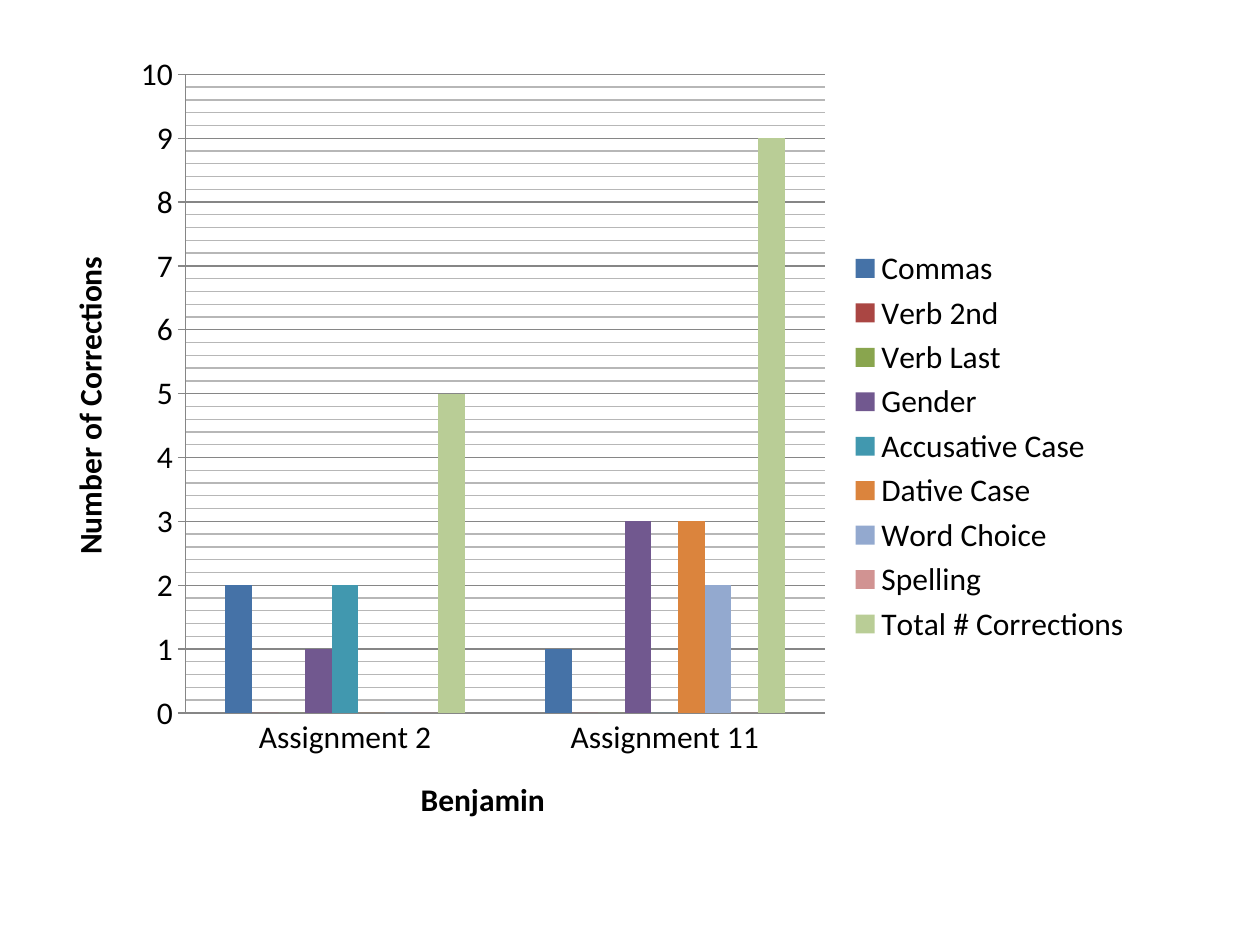
import pptx
import pptx.chart.data
import pptx.dml.color
import pptx.enum.chart
import pptx.oxml
import pptx.oxml.ns
import pptx.util

Pt = pptx.util.Pt
CATEGORIES = ["Assignment 2", "Assignment 11"]
SERIES = [
    ("Commas", (2, 1)),
    ("Verb 2nd", (0, 0)),
    ("Verb Last", (0, 0)),
    ("Gender", (1, 3)),
    ("Accusative Case", (2, 0)),
    ("Dative Case", (0, 3)),
    ("Word Choice", (0, 2)),
    ("Spelling", (0, 0)),
    ("Total # Corrections", (5, 9)),
]
COLORS = {
    "Commas": "4572A7",
    "Verb 2nd": "AA4643",
    "Verb Last": "89A54E",
    "Gender": "71588F",
    "Accusative Case": "4198AF",
    "Dative Case": "DB843D",
    "Word Choice": "93A9CF",
    "Spelling": "D19392",
    "Total # Corrections": "B9CD96",
    "text": "000000",
    "axis": "868686",
    "minor grid": "B7B7B7",
}
PLOT_LAYOUT = {"x": 0.13, "y": 0.04, "w": 0.58, "h": 0.79}  # shares of the chart
LINE_WIDTH = Pt(0.75)


def color(name):
    return pptx.dml.color.RGBColor.from_string(COLORS[name])


def style_font(font, bold=False):
    font.name, font.size, font.bold = "Calibri", Pt(18), bold
    font.color.rgb = color("text")


def style_line(line):
    line.color.rgb = color("axis")
    line.width = LINE_WIDTH


def style_axis(axis, title, tick_mark):
    axis.axis_title.text_frame.text = title
    style_font(axis.axis_title.text_frame.paragraphs[0].runs[0].font, bold=True)
    axis.major_tick_mark = tick_mark
    axis.minor_tick_mark = pptx.enum.chart.XL_TICK_MARK.NONE
    style_line(axis.format.line)


def style_minor_gridlines(axis):
    gridlines = axis._element.find(pptx.oxml.ns.qn("c:minorGridlines"))
    gridlines.append(pptx.oxml.parse_xml(
        f'<c:spPr {pptx.oxml.ns.nsdecls("c", "a")}><a:ln w="{int(LINE_WIDTH)}">'
        f'<a:solidFill><a:srgbClr val="{COLORS["minor grid"]}"/></a:solidFill>'
        f'</a:ln></c:spPr>'))


def place_plot(chart):
    """Fix the inner plot area, without axis labels, at PLOT_LAYOUT."""
    plot_area = chart.plots[0]._element.getparent()
    for old in plot_area.findall(pptx.oxml.ns.qn("c:layout")):
        plot_area.remove(old)
    modes = "".join(f'<c:{key}Mode val="edge"/>' for key in "xy")
    sizes = "".join(f'<c:{key} val="{share}"/>' for key, share in PLOT_LAYOUT.items())
    plot_area.insert(0, pptx.oxml.parse_xml(
        f'<c:layout {pptx.oxml.ns.nsdecls("c")}><c:manualLayout>'
        f'<c:layoutTarget val="inner"/>{modes}{sizes}</c:manualLayout></c:layout>'))


def add_corrections_chart(page):
    data = pptx.chart.data.CategoryChartData()
    data.categories = CATEGORIES
    for name, values in SERIES:
        data.add_series(name, values)
    chart = page.shapes.add_chart(
        pptx.enum.chart.XL_CHART_TYPE.COLUMN_CLUSTERED,
        Pt(24), Pt(24), Pt(630), Pt(462), data).chart
    chart.has_title = False
    style_font(chart.font)

    chart.has_legend = True
    chart.legend.position = pptx.enum.chart.XL_LEGEND_POSITION.RIGHT
    chart.legend.include_in_layout = False

    ticks = pptx.enum.chart.XL_TICK_MARK
    style_axis(chart.category_axis, "Benjamin", ticks.NONE)
    axis = chart.value_axis
    style_axis(axis, "Number of Corrections", ticks.OUTSIDE)
    axis.minimum_scale, axis.maximum_scale = 0, 10
    axis.major_unit, axis.minor_unit = 1, 0.2
    axis.has_major_gridlines = axis.has_minor_gridlines = True
    style_line(axis.major_gridlines.format.line)
    style_minor_gridlines(axis)

    plot = chart.plots[0]
    plot.gap_width, plot.overlap = 300, 0
    plot.vary_by_categories = False
    for series in plot.series:
        series.format.fill.solid()
        series.format.fill.fore_color.rgb = color(series.name)
    place_plot(chart)


def main():
    deck = pptx.Presentation()
    deck.slide_width, deck.slide_height = Pt(720), Pt(540)
    page = deck.slides.add_slide(deck.slide_layouts[6])
    add_corrections_chart(page)
    deck.save("out.pptx")


if __name__ == "__main__":
    main()
